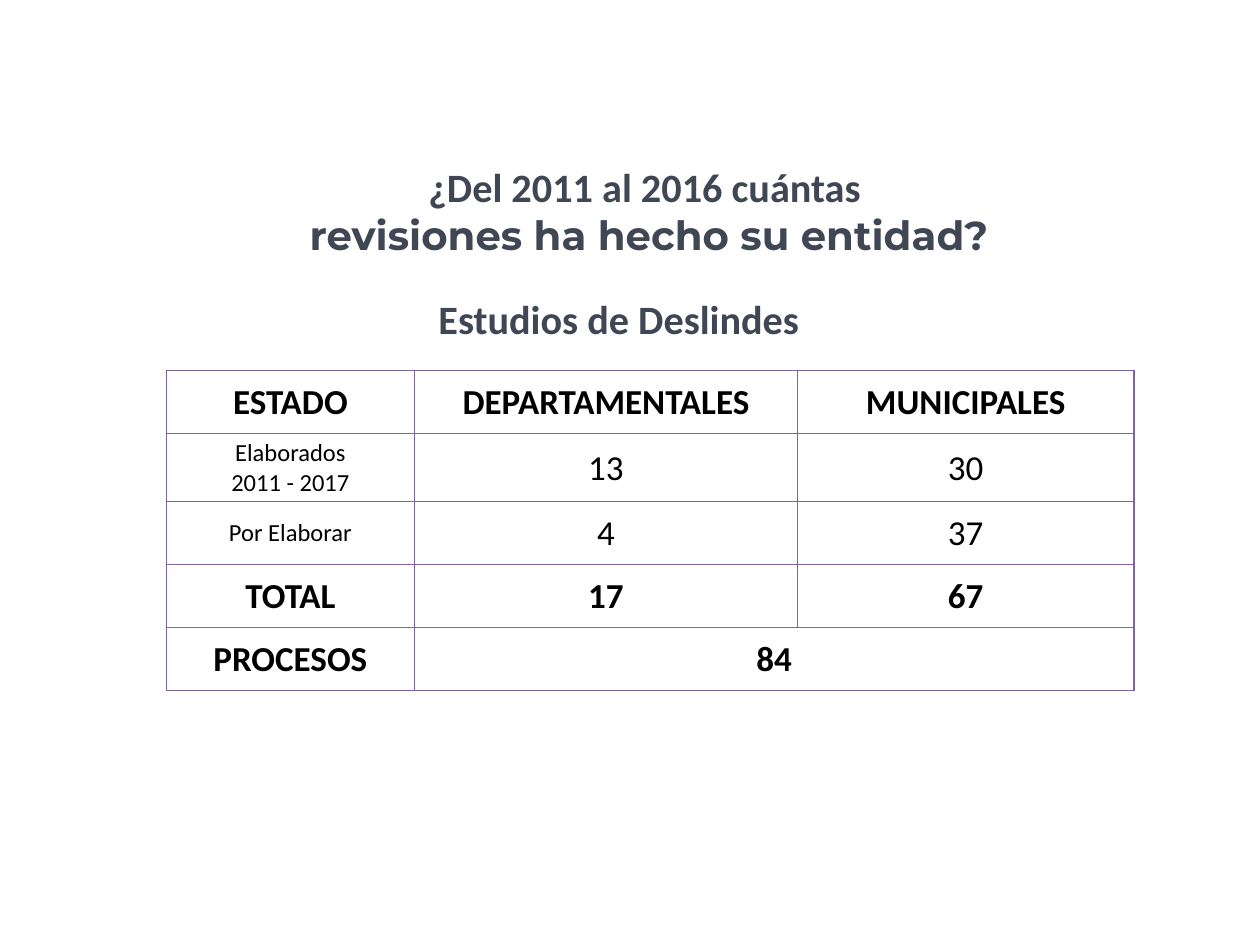
import copy

import pptx
import pptx.dml.color
import pptx.enum.text
import pptx.oxml
import pptx.oxml.ns
import pptx.util

Pt = pptx.util.Pt
RGB = pptx.dml.color.RGBColor
CENTER = pptx.enum.text.PP_ALIGN.CENTER
MIDDLE = pptx.enum.text.MSO_ANCHOR.MIDDLE

SLATE = RGB(0x3F, 0x46, 0x54)
BLACK = RGB(0, 0, 0)
PURPLE = RGB(0x80, 0x64, 0xA2)

HEAD = {"name": "Calibri", "size": Pt(23), "bold": True}
BOLD = {"name": "Calibri", "size": Pt(20), "bold": True}
PLAIN = {**BOLD, "bold": False}
SMALL = {**PLAIN, "size": Pt(14)}

COLS = (141.84, 218.88, 192.24)
ROWS = (36, 38.88, 36, 36, 36)
DATA = (
    ("ESTADO", "DEPARTAMENTALES", "MUNICIPALES"),
    ("Elaborados\n2011 - 2017", "13", "30"),
    ("Por Elaborar", "4", "37"),
    ("TOTAL", "17", "67"),
    ("PROCESOS", "84", ""),
)


def write(para, text, style, color):
    """Fill a centred paragraph and format its runs and line breaks."""
    para.text = text
    para.alignment = CENTER
    for run in para.runs:
        for key, value in style.items():
            setattr(run.font, key, value)
        run.font.color.rgb = color
    for brk in para._p.findall(pptx.oxml.ns.qn("a:br")):
        brk.append(copy.deepcopy(para.runs[0]._r.rPr))


def add_head(slide, box, lines):
    """Add a text box from (text, font name) lines."""
    frame = slide.shapes.add_textbox(*map(Pt, box)).text_frame
    frame.word_wrap = True
    for i, (text, name) in enumerate(lines):
        para = frame.add_paragraph() if i else frame.paragraphs[0]
        write(para, text, {**HEAD, "name": name}, SLATE)


def add_lines(cell):
    """Draw a thin border on all four sides of a cell."""
    props = cell._tc.get_or_add_tcPr()
    space = pptx.oxml.ns.nsdecls("a")
    for side in ("lnL", "lnR", "lnT", "lnB"):
        props.append(pptx.oxml.parse_xml(
            f'<a:{side} {space} w="{Pt(1)}"><a:solidFill>'
            f'<a:srgbClr val="{PURPLE}"/></a:solidFill></a:{side}>'))


def pick(row, col):
    """Choose the text style by the place in the table."""
    if row not in (1, 2):
        return BOLD
    return PLAIN if col else SMALL


def add_grid(slide, left, top):
    shape = slide.shapes.add_table(
        len(ROWS), len(COLS), Pt(left), Pt(top), Pt(sum(COLS)), Pt(sum(ROWS)))
    table = shape.table
    table.first_row = table.horz_banding = False
    for col, width in zip(table.columns, COLS):
        col.width = Pt(width)
    for row, height in zip(table.rows, ROWS):
        row.height = Pt(height)

    form = {
        "vertical_anchor": MIDDLE,
        "margin_left": Pt(0.72),
        "margin_right": Pt(0.72),
        "margin_top": Pt(0.72),
        "margin_bottom": Pt(0),
    }
    for r, texts in enumerate(DATA):
        for c, text in enumerate(texts):
            cell = table.cell(r, c)
            for key, value in form.items():
                setattr(cell, key, value)
            add_lines(cell)
            cell.fill.background()
            write(cell.text_frame.paragraphs[0], text, pick(r, c), BLACK)

    # The grand total spans both count columns
    table.cell(4, 1).merge(table.cell(4, 2))


def main():
    deck = pptx.Presentation()
    deck.slide_width, deck.slide_height = Pt(720), Pt(540)
    slide = deck.slides.add_slide(deck.slide_layouts[6])

    # Question
    add_head(slide, (87.84, 89.28, 566.64, 63.36), (
        ("¿Del 2011 al 2016 cuántas ", "Calibri"),
        ("revisiones ha hecho su entidad?", "Montserrat")))

    # Table and its heading
    add_grid(slide, 95.04, 211.68)
    add_head(slide, (70.56, 164.88, 566.64, 35.28),
             (("Estudios de Deslindes", "Calibri"),))

    deck.save("out.pptx")


if __name__ == "__main__":
    main()
